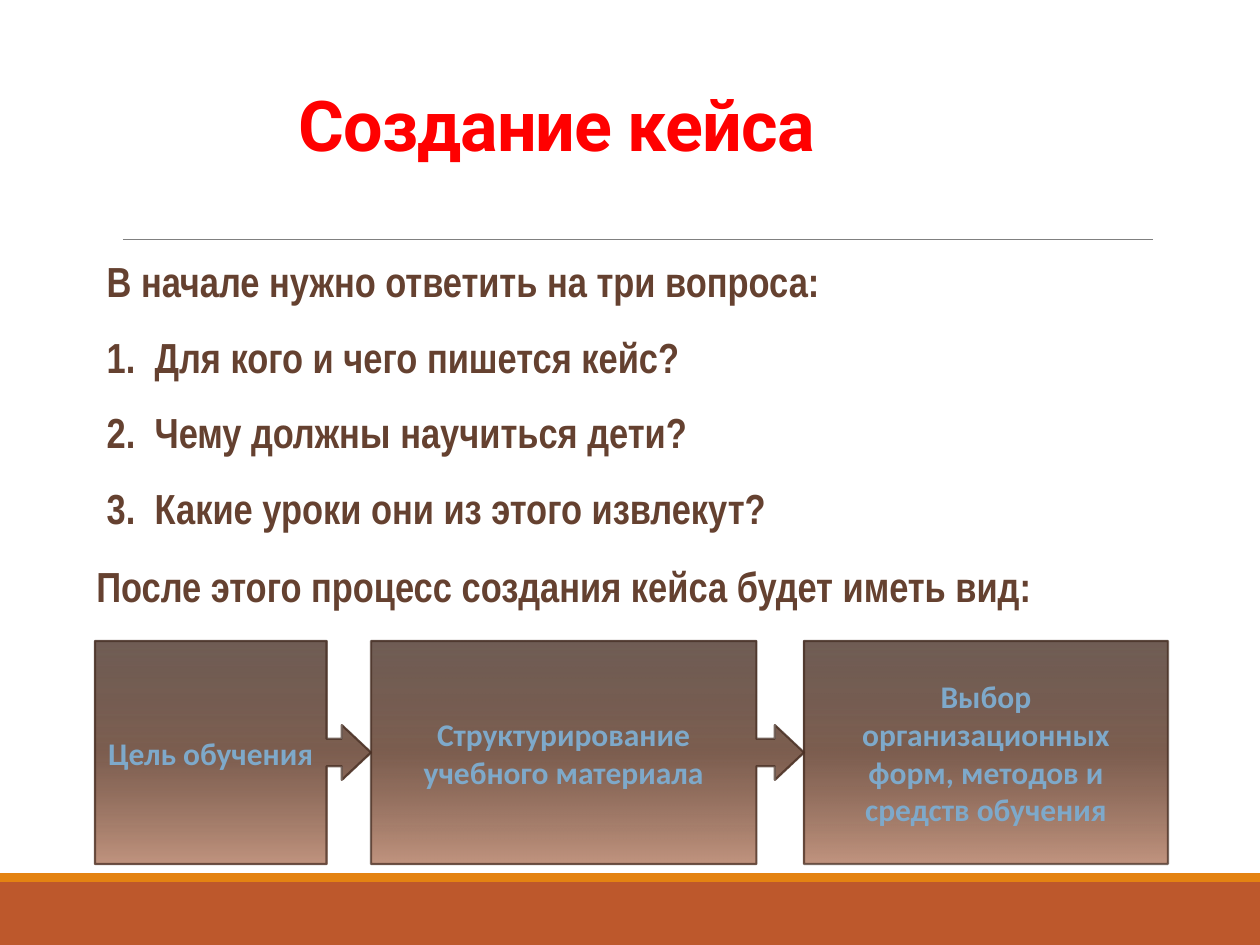
from pptx import Presentation
from pptx.dml.color import RGBColor
from pptx.enum.shapes import MSO_CONNECTOR, MSO_SHAPE as SHAPE
from pptx.enum.text import MSO_ANCHOR as ANCHOR, MSO_AUTO_SIZE as FIT, PP_ALIGN as ALIGN
from pptx.oxml import parse_xml
from pptx.oxml.ns import nsdecls
from pptx.oxml.xmlchemy import OxmlElement
from pptx.util import Pt

PX = 914400 / 126
RUST = RGBColor(0xBD, 0x58, 0x2C)
ORANGE = RGBColor(0xE4, 0x83, 0x12)
GRAY = RGBColor(0x80, 0x80, 0x80)
RED = RGBColor(0xFF, 0x00, 0x00)
BROWN = RGBColor(0x65, 0x41, 0x30)
DARK = RGBColor(0x43, 0x2B, 0x20)
TAN = RGBColor(0xC2, 0x95, 0x80)
BLUE = RGBColor(0x7E, 0xA9, 0xCA)


def px(*lengths):
    return [round(n * PX) for n in lengths]


def write(p, text, font, size, color, align=ALIGN.LEFT, spacing=1.0, indent=0, bullet=None):
    p.alignment, p.line_spacing, p.space_before = align, spacing, Pt(0)
    pPr = p._p.get_or_add_pPr()
    left, = px(indent)
    pPr.set("marL", str(left))
    pPr.set("indent", str(-left))
    mark = OxmlElement("a:buAutoNum" if bullet else "a:buNone")
    if bullet:
        mark.set("type", bullet)
    pPr.append(mark)
    r = p.add_run()
    r.text = text
    r.font.name, r.font.size, r.font.bold = font, Pt(size), True
    r.font.color.rgb = color
    return r


prs = Presentation()
prs.slide_width, prs.slide_height = px(1260, 945)
s = prs.slides.add_slide(prs.slide_layouts[1])

for top, height, color in [(882, 63, RUST), (873, 9, ORANGE)]:
    band = s.shapes.add_shape(SHAPE.RECTANGLE, *px(0, top, 1260, height))
    band.shadow.inherit = False
    band.fill.solid()
    band.fill.fore_color.rgb = color
    band.line.fill.background()

rule = s.shapes.add_connector(MSO_CONNECTOR.STRAIGHT, *px(123, 239, 1153, 239))
rule.line.color.rgb, rule.line.width = GRAY, Pt(0.5)
rule._element.spPr.append(OxmlElement("a:effectLst"))

title, body = s.placeholders
title.left, title.top, title.width, title.height = px(286, 69, 728, 103)
tf = title.text_frame
tf.auto_size, tf.vertical_anchor = FIT.NONE, ANCHOR.BOTTOM
r = write(tf.paragraphs[0], "Создание кейса", "Roboto", 40, RED, spacing=0.85)
r._r.get_or_add_rPr().set("spc", "-50")

body.left, body.top, body.width, body.height = px(94, 224, 767, 318)
tf = body.text_frame
tf.auto_size = FIT.NONE
write(tf.paragraphs[0], "В начале нужно ответить на три вопроса:", "Arial Narrow", 24, BROWN, spacing=1.5)
for question in [
    "Для кого и чего пишется кейс?",
    "Чему должны научиться дети?",
    "Какие уроки они из этого извлекут?",
]:
    write(tf.add_paragraph(), question, "Arial Narrow", 24, BROWN,
          spacing=1.5, indent=48, bullet="arabicPeriod")

tf = s.shapes.add_textbox(*px(84, 554, 1082, 63)).text_frame
tf.word_wrap = True
write(tf.paragraphs[0], "После этого процесс создания кейса будет иметь вид:",
      "Arial Narrow", 24, BROWN, indent=48)

stops = "".join(
    f'<a:gs pos="{pos}000"><a:srgbClr val="{color}"><a:alpha val="{alpha}000"/></a:srgbClr></a:gs>'
    for pos, color, alpha in [(0, TAN, 100), (50, BROWN, 84), (100, DARK, 76)]
)
GRADIENT = (f'<a:gradFill {nsdecls("a")} rotWithShape="1"><a:gsLst>{stops}</a:gsLst>'
            '<a:lin ang="16200000" scaled="0"/></a:gradFill>')

for left, width, body_share, text in [
    (95, 276, 0.839, "Цель обучения"),
    (371, 433, 0.89, "Структурирование учебного материала"),
    (804, 364, None, "Выбор организационных форм, методов и средств обучения"),
]:
    kind = SHAPE.RIGHT_ARROW_CALLOUT if body_share else SHAPE.RECTANGLE
    step = s.shapes.add_shape(kind, *px(left, 641, width, 223))
    if body_share:
        for i, value in enumerate([0.123, 0.123, 0.131, body_share]):
            step.adjustments[i] = value
    step.shadow.inherit = False
    step._element.spPr.find("{*}prstGeom").addnext(parse_xml(GRADIENT))
    step.line.color.rgb, step.line.width = DARK, Pt(1.25)
    alpha = OxmlElement("a:alpha")
    alpha.set("val", "70000")
    step.line._ln.find(".//{*}srgbClr").append(alpha)
    tf = step.text_frame
    tf.word_wrap, tf.vertical_anchor = True, ANCHOR.MIDDLE
    write(tf.paragraphs[0], text, "Calibri", 18, BLUE, align=ALIGN.CENTER)

prs.save("out.pptx")
